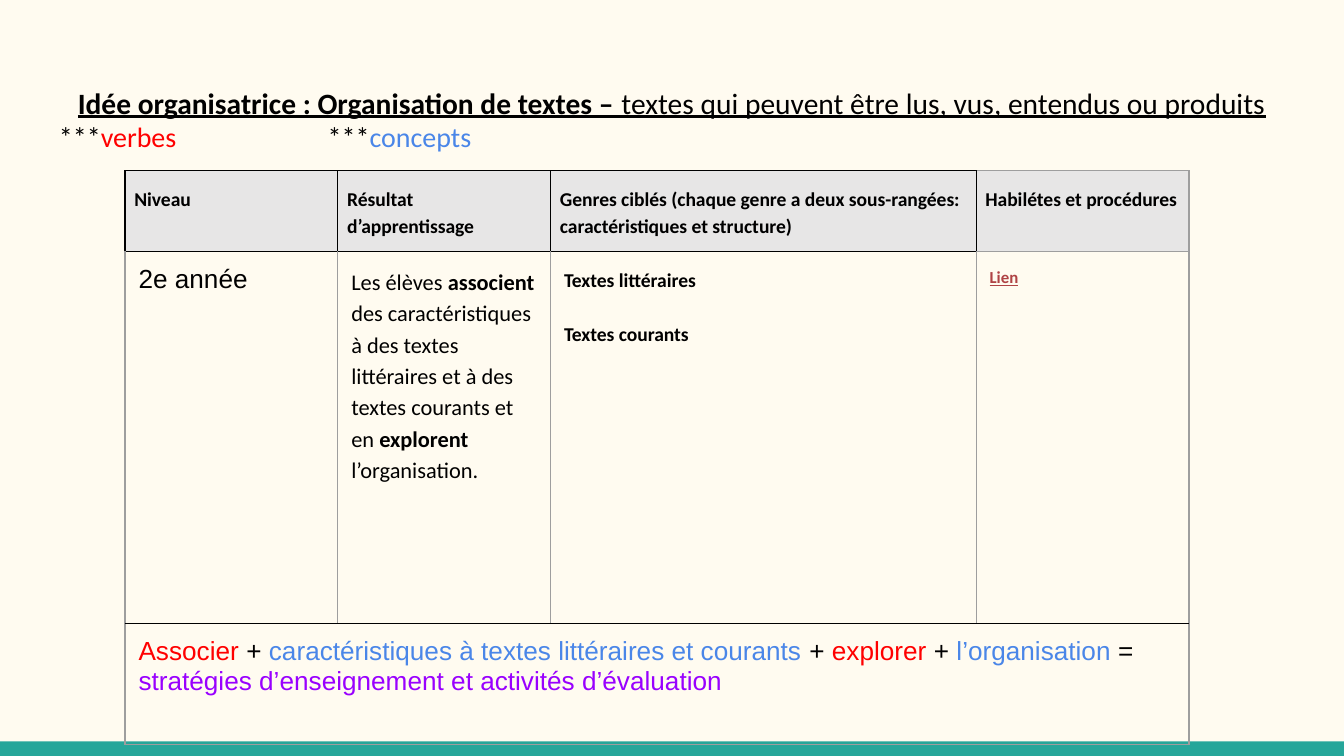
"""Build the slide on the organisation of texts for second grade."""
from dataclasses import dataclass

from lxml import etree
from pptx import Presentation
from pptx.dml.color import RGBColor
from pptx.enum.shapes import MSO_SHAPE
from pptx.enum.text import PP_ALIGN
from pptx.oxml.ns import qn
from pptx.util import Pt

RECT = MSO_SHAPE.RECTANGLE
CENTER = PP_ALIGN.CENTER
LEFT = PP_ALIGN.LEFT


@dataclass(frozen=True)
class Theme:
    """Colours, fonts and type sizes of the slide."""

    paper: str = "FFFBF0"
    teal: str = "26A69A"
    header: str = "E7E6E6"
    black: str = "000000"
    grey: str = "9E9E9E"
    verb: str = "FF0000"
    concept: str = "4A86E8"
    strategy: str = "9900FF"
    link: str = "AF4345"
    main_font: str = "Calibri"
    plain_font: str = "Arial"
    title: float = 15.8
    legend: float = 15
    label: float = 10.5
    body: float = 12
    large: float = 14
    small: float = 9


T = Theme()


def add_run(p, text, size, color=T.black, bold=False, underline=False, font=T.main_font):
    """Append a formatted run to a paragraph."""
    r = p.add_run()
    r.text = text
    r.font.size = Pt(size)
    r.font.name = font
    r.font.bold = bold
    r.font.underline = underline
    r.font.color.rgb = RGBColor.from_string(color)


def set_margins(target, side, vertical):
    """Set the inner margins of a cell or text frame."""
    target.margin_left = target.margin_right = Pt(side)
    target.margin_top = target.margin_bottom = Pt(vertical)


def add_bar(s):
    """Draw the coloured bar along the bottom edge."""
    sp = s.shapes.add_shape(RECT, Pt(0), Pt(397.2), Pt(720), Pt(7.8))
    sp.shadow.inherit = False
    sp.fill.solid()
    sp.fill.fore_color.rgb = RGBColor.from_string(T.teal)
    sp.line.fill.background()


def add_title(s):
    """Write the title and the colour legend below it."""
    tf = s.shapes.add_textbox(Pt(24.5), Pt(35.3), Pt(671), Pt(48.2)).text_frame
    tf.word_wrap = True
    set_margins(tf, 7.2, 7.2)
    p = tf.paragraphs[0]
    p.alignment = CENTER
    p.line_spacing = 1.15
    add_run(p, "Idée organisatrice : Organisation de textes – ", T.title, bold=True, underline=True)
    add_run(p, "textes qui peuvent être lus, vus, entendus ou produits", T.title, underline=True)
    p = tf.add_paragraph()
    p.alignment = LEFT
    tabs = etree.SubElement(p._p.get_or_add_pPr(), qn("a:tabLst"))
    etree.SubElement(tabs, qn("a:tab"), pos=str(Pt(144)), algn="l")
    for text, color in (("***", T.black), ("verbes", T.verb),
                        ("\t***", T.black), ("concepts", T.concept)):
        add_run(p, text, T.legend, color)


def set_borders(cell, left, right, top, bottom):
    """Give the four sides of a cell their line colours."""
    tc_pr = cell._tc.get_or_add_tcPr()
    for i, (side, color) in enumerate(zip("LRTB", (left, right, top, bottom))):
        ln = etree.Element(qn(f"a:ln{side}"), w=str(Pt(0.75)))
        fill = etree.SubElement(ln, qn("a:solidFill"))
        etree.SubElement(fill, qn("a:srgbClr"), val=color)
        tc_pr.insert(i, ln)


def style_cell(cell, borders, side=7.2, fill=None):
    """Set the margins, fill and borders of a cell and return its first paragraph."""
    set_margins(cell, side, 7.2)
    if fill:
        cell.fill.solid()
        cell.fill.fore_color.rgb = RGBColor.from_string(fill)
    else:
        cell.fill.background()
    set_borders(cell, *borders)
    return cell.text_frame.paragraphs[0]


def add_grid(s):
    """Add the empty table with its merged cells."""
    table = s.shapes.add_table(3, 5, Pt(67), Pt(91.4), Pt(570), Pt(301.7)).table
    table.first_row = table.horz_banding = False
    for column in table.columns:
        column.width = Pt(114)
    for row, height in zip(table.rows, (37.5, 199.4, 64.8)):
        row.height = Pt(height)
    for row in (0, 1):
        table.cell(row, 2).merge(table.cell(row, 3))
    table.cell(2, 0).merge(table.cell(2, 4))
    return table


def fill_header(table):
    """Write the header row."""
    black, grey = (T.black,) * 4, (T.black, T.grey, T.grey, T.grey)
    for col, text, borders in (
        (0, "Niveau", black),
        (1, "Résultat d’apprentissage", black),
        (2, "Genres ciblés (chaque genre a deux sous-rangées: caractéristiques et structure)", black),
        (4, "Habilétes et procédures", grey),
    ):
        p = style_cell(table.cell(0, col), borders, 5, T.header)
        p.line_spacing = 1.15
        add_run(p, text, T.label, bold=True)


def fill_body(table):
    """Write the row for the second grade."""
    borders = (T.grey, T.grey, T.black, T.black)
    p = style_cell(table.cell(1, 0), borders)
    add_run(p, "2e année", T.large, font=T.plain_font)

    p = style_cell(table.cell(1, 1), borders)
    p.line_spacing = 1.15
    for text, bold in (
        ("Les élèves", False),
        (" associent ", True),
        ("des caractéristiques à des textes littéraires et à des textes courants et en ", False),
        ("explorent", True),
        (" l’organisation.", False),
    ):
        add_run(p, text, T.body, bold=bold)

    genres = table.cell(1, 2)
    first = style_cell(genres, borders)
    second = genres.text_frame.add_paragraph()
    second.space_before = Pt(14.7)
    for p, text in ((first, "Textes littéraires"), (second, "Textes courants")):
        p.line_spacing = 1.15
        add_run(p, text, T.label, bold=True)

    p = style_cell(table.cell(1, 4), (T.grey, T.grey, T.grey, T.black))
    p.line_spacing = 1.15
    add_run(p, "Lien", T.small, T.link, bold=True, underline=True)


def fill_summary(table):
    """Write the colour-coded formula in the last row."""
    p = style_cell(table.cell(2, 0), (T.grey, T.grey, T.black, T.grey))
    for text, color in (
        ("Associer ", T.verb),
        ("+ ", T.black),
        ("caractéristiques à textes littéraires et courants", T.concept),
        (" + ", T.black),
        ("explorer ", T.verb),
        ("+ ", T.black),
        ("l’organisation ", T.concept),
        ("= ", T.black),
        ("stratégies d’enseignement et activités d’évaluation", T.strategy),
    ):
        add_run(p, text, T.large, color, font=T.plain_font)


def main():
    """Build and save the presentation."""
    prs = Presentation()
    prs.slide_width, prs.slide_height = Pt(720), Pt(405)
    s = prs.slides.add_slide(prs.slide_layouts[6])
    s.background.fill.solid()
    s.background.fill.fore_color.rgb = RGBColor.from_string(T.paper)
    add_bar(s)
    add_title(s)
    table = add_grid(s)
    fill_header(table)
    fill_body(table)
    fill_summary(table)
    prs.save("out.pptx")


if __name__ == "__main__":
    main()
